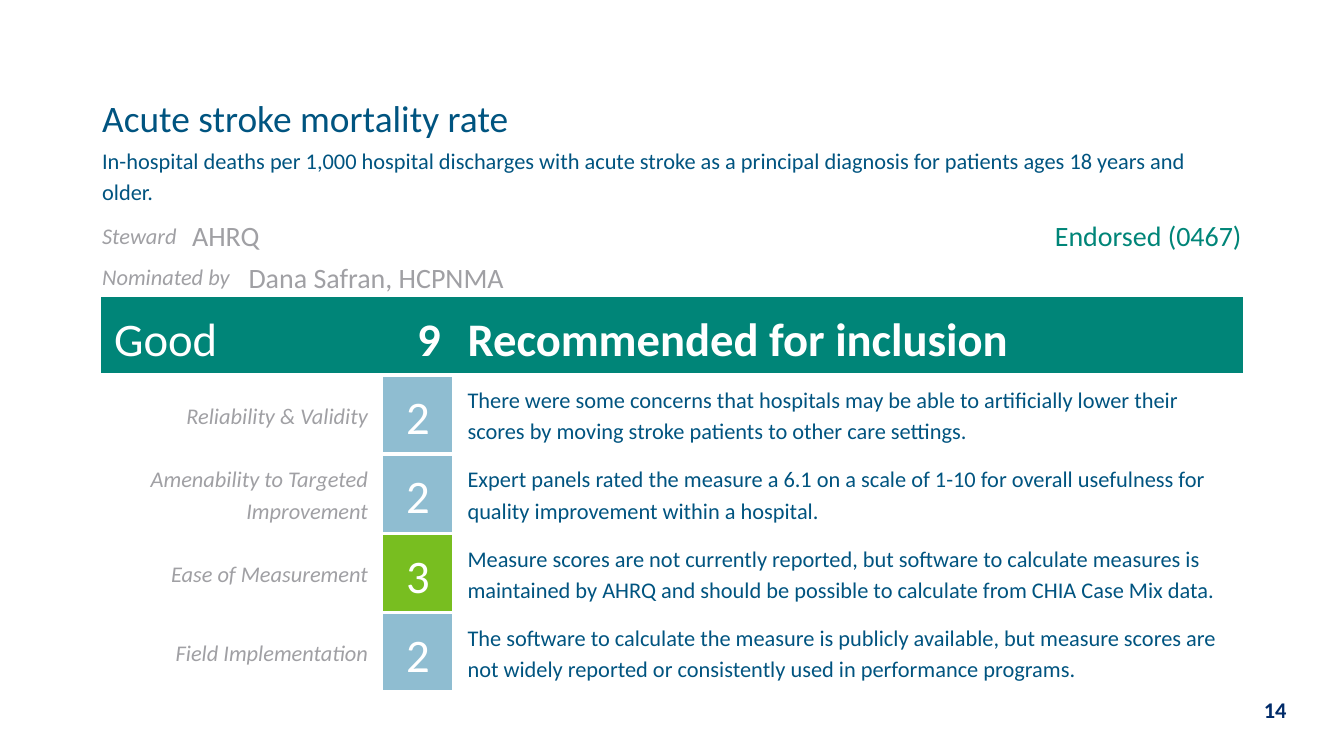
import pptx
import pptx.dml.color
import pptx.enum.text
import pptx.oxml
import pptx.oxml.ns
import pptx.util
from pptx.util import Inches

COLORS = {
    "title": "005480",
    "muted": "A0A0A4",
    "good": "008578",
    "two": "8FBDD1",
    "three": "78BE20",
    "white": "FFFFFF",
    "number": "002B69",
}
FORMATS = {
    "title": {"size": 20, "color": "title"},
    "body": {"size": 12, "color": "title"},
    "label": {"size": 12, "color": "muted", "italic": True},
    "value": {"size": 15, "color": "muted"},
    "status": {"size": 15, "color": "good"},
    "rating": {"size": 25, "color": "white"},
    "verdict": {"size": 25, "color": "white", "bold": True},
    "number": {"size": 12, "color": "number", "bold": True},
}
ALIGN = pptx.enum.text.PP_ALIGN
ANCHOR = pptx.enum.text.MSO_ANCHOR
NO_STYLE = "{2D5ABB26-0587-4C30-8999-92F81FD0307C}"
COLUMN_WIDTHS = [0.67, 0.42, 0.69, 0.31, 0.54, 3.29, 2.58]
ROW_HEIGHTS = [0.4, 0.53, 0.3, 0.32, 0.58] + [0.59] * 4
HEADER_MARGINS = (0.01, 0.01, 0.1, 0)
CELL_MARGINS = (0.1, 0.05, 0.1, 0.05)
CRITERIA = [
    ("Reliability & Validity", "2", "two",
     "There were some concerns that hospitals may be able to artificially lower their "
     "scores by moving stroke patients to other care settings."),
    ("Amenability to Targeted Improvement", "2", "two",
     "Expert panels rated the measure a 6.1 on a scale of 1-10 for overall usefulness for "
     "quality improvement within a hospital."),
    ("Ease of Measurement", "3", "three",
     "Measure scores are not currently reported, but software to calculate measures is "
     "maintained by AHRQ and should be possible to calculate from CHIA Case Mix data."),
    ("Field Implementation", "2", "two",
     "The software to calculate the measure is publicly available, but measure scores are "
     "not widely reported or consistently used in performance programs."),
]


def rgb(name):
    return pptx.dml.color.RGBColor.from_string(COLORS[name])


def write_text(frame, text, style, align, line_spacing):
    paragraph = frame.paragraphs[0]
    paragraph.alignment = align
    paragraph.line_spacing = line_spacing
    run = paragraph.add_run()
    run.text = text
    values = {"name": "Calibri", "bold": False, "italic": False, **FORMATS[style]}
    run.font.color.rgb = rgb(values.pop("color"))
    values["size"] = pptx.util.Pt(values["size"])
    for name, value in values.items():
        setattr(run.font, name, value)


def set_margins(target, margins):
    for side, margin in zip(("left", "top", "right", "bottom"), margins):
        setattr(target, f"margin_{side}", Inches(margin))


def add_borders(cell):
    """Draw white rules on all four sides of a cell."""
    properties = cell._tc.get_or_add_tcPr()
    for position, side in enumerate("LRTB"):
        line = pptx.oxml.parse_xml(
            f'<a:ln{side} {pptx.oxml.ns.nsdecls("a")} w="28575"><a:solidFill>'
            f'<a:srgbClr val="{COLORS["white"]}"/></a:solidFill></a:ln{side}>')
        properties.insert(position, line)


def fill_cell(table, row, column, span, text, style, align=ALIGN.LEFT, fill=None,
              margins=CELL_MARGINS, anchor=ANCHOR.MIDDLE, borders=False):
    cell = table.cell(row, column)
    if span > 1:
        cell.merge(table.cell(row, column + span - 1))
    cell.vertical_anchor = anchor
    set_margins(cell, margins)
    write_text(cell.text_frame, text, style, align, 1.15)
    if fill:
        for offset in range(span):
            part = table.cell(row, column + offset)
            part.fill.solid()
            part.fill.fore_color.rgb = rgb(fill)
    else:
        cell.fill.background()
    if borders:
        add_borders(cell)


def add_measure_table(slide):
    frame = slide.shapes.add_table(
        len(ROW_HEIGHTS), len(COLUMN_WIDTHS), Inches(0.75), Inches(0.66),
        Inches(sum(COLUMN_WIDTHS)), Inches(sum(ROW_HEIGHTS)))
    table = frame.table
    table.first_row = table.horz_banding = False
    table._tbl.tblPr.find(pptx.oxml.ns.qn("a:tableStyleId")).text = NO_STYLE
    for column, width in zip(table.columns, COLUMN_WIDTHS):
        column.width = Inches(width)
    for row, height in zip(table.rows, ROW_HEIGHTS):
        row.height = Inches(height)
    return table


def fill_header(table):
    header = {"margins": HEADER_MARGINS}
    fill_cell(table, 0, 0, 7, "Acute stroke mortality rate", "title", **header)
    fill_cell(table, 1, 0, 7,
              "In-hospital deaths per 1,000 hospital discharges with acute stroke as a "
              "principal diagnosis for patients ages 18 years and older.",
              "body", margins=(0.01, 0.01, 0.1, 0.05), anchor=ANCHOR.TOP)
    fill_cell(table, 2, 0, 1, "Steward", "label", **header)
    fill_cell(table, 2, 1, 5, "AHRQ", "value", **header)
    fill_cell(table, 2, 6, 1, "Endorsed (0467)", "status", ALIGN.RIGHT,
              margins=(0.1, 0.01, 0.01, 0))
    fill_cell(table, 3, 0, 2, "Nominated by", "label", **header)
    fill_cell(table, 3, 2, 5, "Dana Safran, HCPNMA", "value", **header)


def fill_ratings(table):
    fill_cell(table, 4, 0, 3, "Good", "rating", fill="good")
    fill_cell(table, 4, 3, 2, "9", "verdict", ALIGN.RIGHT, fill="good")
    fill_cell(table, 4, 5, 2, "Recommended for inclusion", "verdict", fill="good")
    for row, (label, score, color, comment) in enumerate(CRITERIA, start=5):
        fill_cell(table, row, 0, 4, label, "label", ALIGN.RIGHT, borders=True)
        fill_cell(table, row, 4, 1, score, "rating", ALIGN.CENTER, color, borders=True)
        fill_cell(table, row, 5, 2, comment, "body", borders=True)


def add_slide_number(slide, text):
    box = slide.shapes.add_textbox(Inches(7.59), Inches(5.18), Inches(2.08), Inches(0.2))
    frame = box.text_frame
    frame.word_wrap = True
    frame.vertical_anchor = ANCHOR.MIDDLE
    write_text(frame, text, "number", ALIGN.RIGHT, 1.0)


def main():
    presentation = pptx.Presentation()
    presentation.slide_width = Inches(10)
    presentation.slide_height = Inches(10) * 9 // 16
    slide = presentation.slides.add_slide(presentation.slide_layouts[6])
    add_slide_number(slide, "14")
    table = add_measure_table(slide)
    fill_header(table)
    fill_ratings(table)
    presentation.save("out.pptx")


if __name__ == "__main__":
    main()
